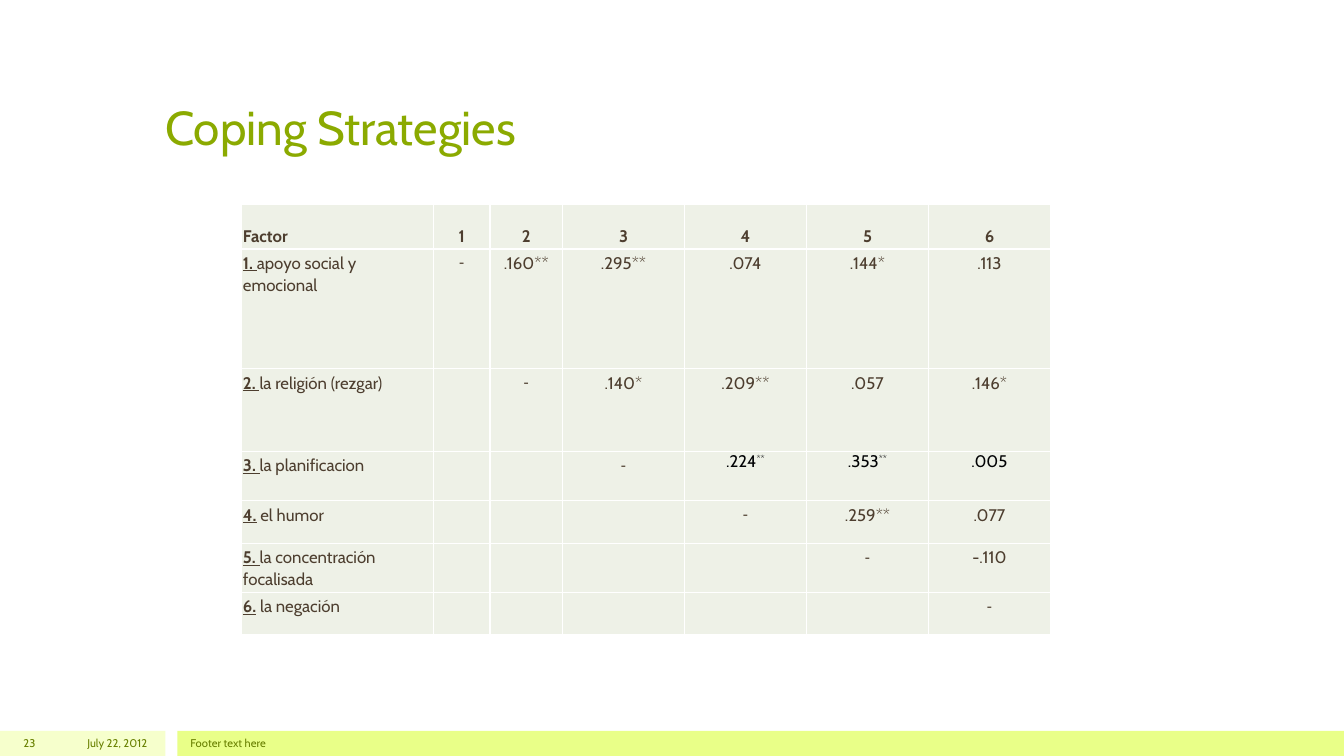
from dataclasses import dataclass

from lxml.etree import SubElement
from pptx import Presentation
from pptx.dml.color import RGBColor
from pptx.enum.shapes import MSO_SHAPE
from pptx.enum.text import MSO_ANCHOR, PP_ALIGN
from pptx.oxml.ns import qn
from pptx.slide import Slide
from pptx.table import _Cell
from pptx.text.text import _Paragraph
from pptx.util import Inches, Pt

COLORS = {
    "title": "8BAA00",
    "footer": "688000",
    "pale_bar": "F6FFCC",
    "lime_bar": "E9FF88",
    "cell": "EEF1E7",
    "border": "FFFFFF",
    "text": "4D3E2F",
    "dark": "010204",
}
FONT = "Cabin"
DASH_FONT = "Calibri"
COL_WIDTHS = [1.91, 0.56, 0.72] + [1.21] * 4
HEADER_HEIGHT = 0.44


@dataclass
class Bar:
    left: float
    width: float
    color: str


@dataclass
class FooterText:
    left: float
    width: float
    text: str
    align: PP_ALIGN


@dataclass
class Factor:
    number: str
    name: str
    values: list[str]
    height: float
    raised: bool = False


BARS = [Bar(0, 1.64, "pale_bar"), Bar(1.76, 11.57, "lime_bar")]
FOOTERS = [
    FooterText(0.47, 1.09, "July 22, 2012", PP_ALIGN.RIGHT),
    FooterText(1.79, 10, "Footer text here", PP_ALIGN.LEFT),
    FooterText(0, 0.45, "23", PP_ALIGN.RIGHT),
]
FACTORS = [
    Factor("1. ", "apoyo social y emocional", [".160**", ".295**", ".074", ".144*", ".113"], 1.19),
    Factor("2. ", "la religión (rezgar)", [".140*", ".209**", ".057", ".146*"], 0.82),
    Factor("3. ", "la planificacion", [".224**", ".353**", ".005"], 0.49, raised=True),
    Factor("4.", " el humor", [".259**", ".077"], 0.42),
    Factor("5. ", "la concentración focalisada", ["-.110"], 0.49),
    Factor("6.", " la negación", [], 0.42),
]


def add_run(p: _Paragraph, text: str, size: float, color: str, font: str = FONT,
            bold: bool = False, underline: bool = False, baseline: int = 0) -> None:
    r = p.add_run()
    r.text = text
    r.font.name = font
    r.font.size = Pt(size)
    r.font.bold = bold
    r.font.underline = underline
    r.font.color.rgb = RGBColor.from_string(COLORS[color])
    if baseline:
        r._r.get_or_add_rPr().set("baseline", str(baseline * 1000))


def add_bar(s: Slide, bar: Bar) -> None:
    sp = s.shapes.add_shape(MSO_SHAPE.RECTANGLE, Inches(bar.left), Inches(7.25),
                            Inches(bar.width), Inches(0.25))
    sp.shadow.inherit = False
    sp.fill.solid()
    sp.fill.fore_color.rgb = RGBColor.from_string(COLORS[bar.color])
    sp.line.fill.background()


def add_footer(s: Slide, footer: FooterText) -> None:
    sp = s.shapes.add_textbox(Inches(footer.left), Inches(7.25), Inches(footer.width), Inches(0.25))
    tf = sp.text_frame
    tf.word_wrap = True
    tf.vertical_anchor = MSO_ANCHOR.MIDDLE
    p = tf.paragraphs[0]
    p.alignment = footer.align
    add_run(p, footer.text, 8, "footer")


def style_cell(cell: _Cell) -> None:
    cell.margin_left = cell.margin_right = Inches(0.02)
    cell.margin_top = cell.margin_bottom = Inches(0.02)
    tcPr = cell._tc.get_or_add_tcPr()
    for side in ("lnL", "lnR", "lnT", "lnB"):
        ln = SubElement(tcPr, qn(f"a:{side}"), w=str(Pt(1)))
        SubElement(SubElement(ln, qn("a:solidFill")), qn("a:srgbClr"), val=COLORS["border"])
    cell.fill.solid()
    cell.fill.fore_color.rgb = RGBColor.from_string(COLORS["cell"])


def start_cell(cell: _Cell, align: PP_ALIGN = PP_ALIGN.CENTER) -> _Paragraph:
    p = cell.text_frame.paragraphs[0]
    p.alignment = align
    p.line_spacing = Pt(16)
    return p


def fill_value(cell: _Cell, value: str, raised: bool) -> None:
    p = start_cell(cell)
    if not raised:
        add_run(p, value, 12, "text")
        return
    p.line_spacing = None
    cell.margin_left = cell.margin_right = Inches(0.03)
    cell.margin_top = cell.margin_bottom = 0
    number = value.rstrip("*")
    add_run(p, number, 12, "dark")
    if number != value:
        add_run(p, value[len(number):], 12, "dark", baseline=30)


def add_correlations(s: Slide) -> None:
    heights = [HEADER_HEIGHT] + [factor.height for factor in FACTORS]
    table = s.shapes.add_table(len(heights), len(COL_WIDTHS), Inches(2.39), Inches(2.03),
                               Inches(sum(COL_WIDTHS)), Inches(sum(heights))).table
    table.first_row = table.horz_banding = False
    for column, width in zip(table.columns, COL_WIDTHS):
        column.width = Inches(width)
    for row, height in zip(table.rows, heights):
        row.height = Inches(height)
    for cell in table.iter_cells():
        style_cell(cell)

    for col in range(len(COL_WIDTHS)):
        cell = table.cell(0, col)
        cell.vertical_anchor = MSO_ANCHOR.BOTTOM
        p = start_cell(cell, PP_ALIGN.CENTER if col else PP_ALIGN.LEFT)
        add_run(p, str(col) if col else "Factor", 12, "text", bold=True)

    for row, factor in enumerate(FACTORS, 1):
        p = start_cell(table.cell(row, 0), PP_ALIGN.LEFT)
        add_run(p, factor.number, 12, "text", bold=True, underline=True)
        add_run(p, factor.name, 12, "text")
        add_run(start_cell(table.cell(row, row)), "-", 12, "text", font=DASH_FONT)
        for col, value in enumerate(factor.values, row + 1):
            fill_value(table.cell(row, col), value, factor.raised)


def add_title(s: Slide) -> None:
    sp = s.shapes.title
    sp.left, sp.top, sp.width, sp.height = Inches(1.54), Inches(0.3), Inches(10.25), Inches(1.29)
    tf = sp.text_frame
    tf.vertical_anchor = MSO_ANCHOR.BOTTOM
    p = tf.paragraphs[0]
    p.alignment = PP_ALIGN.LEFT
    add_run(p, "Coping Strategies", 34, "title")


def main() -> None:
    prs = Presentation()
    prs.slide_width, prs.slide_height = Inches(13.33), Inches(7.5)
    s = prs.slides.add_slide(prs.slide_layouts[5])
    for bar in BARS:
        add_bar(s, bar)
    add_title(s)
    add_correlations(s)
    for footer in FOOTERS:
        add_footer(s, footer)
    prs.save("out.pptx")


if __name__ == "__main__":
    main()
